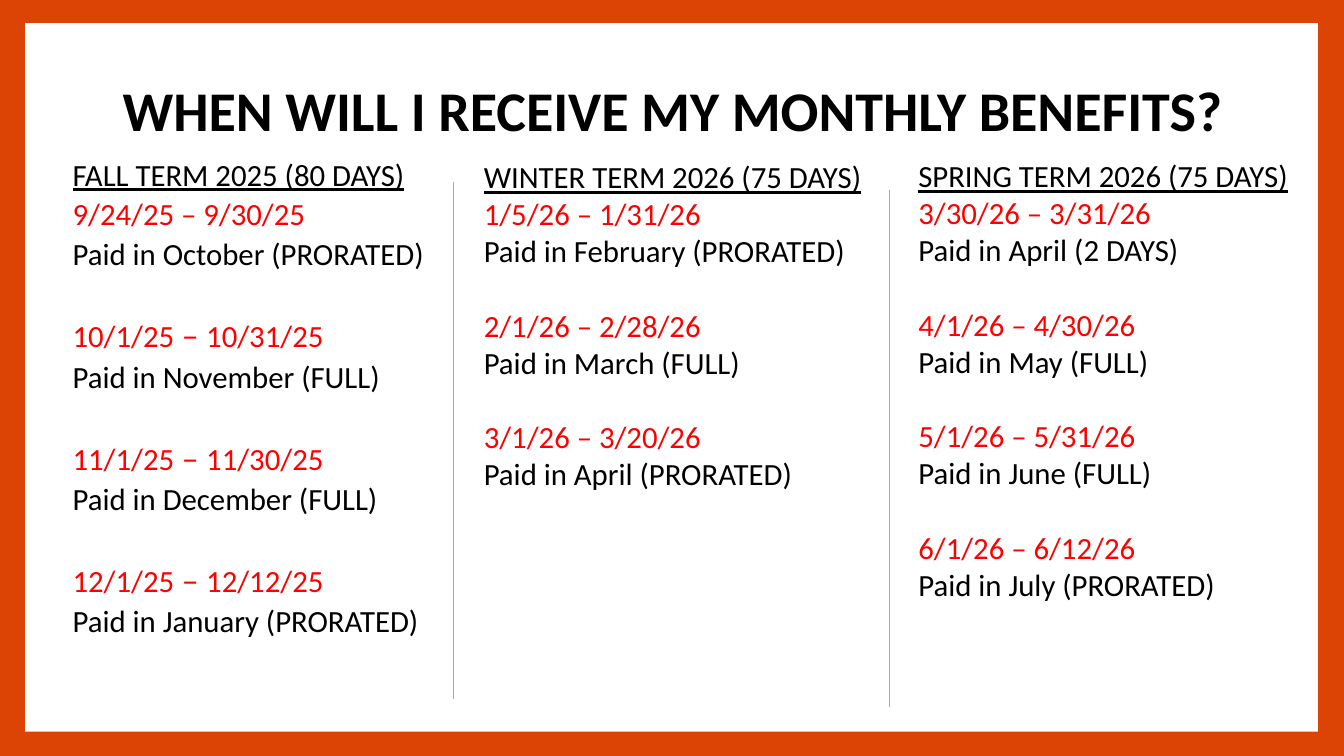
from dataclasses import dataclass

from pptx import Presentation
from pptx import util as u
from pptx.dml.color import RGBColor
from pptx.enum import shapes, text
from pptx.oxml.ns import qn
from lxml import etree

# Content
TITLE = "WHEN WILL I RECEIVE MY MONTHLY BENEFITS?"
FALL = ("FALL TERM 2025 (80 DAYS)", [
    ("9/24/25 – 9/30/25", "Paid in October (PRORATED)"),
    ("10/1/25 – 10/31/25", "Paid in November (FULL)"),
    ("11/1/25 – 11/30/25", "Paid in December (FULL)"),
    ("12/1/25 – 12/12/25", "Paid in January (PRORATED)"),
])
WINTER = ("WINTER TERM 2026 (75 DAYS)", [
    ("1/5/26 – 1/31/26", "Paid in February (PRORATED)"),
    ("2/1/26 – 2/28/26", "Paid in March (FULL)"),
    ("3/1/26 – 3/20/26", "Paid in April (PRORATED)"),
])
SPRING = ("SPRING TERM 2026 (75 DAYS)", [
    ("3/30/26 – 3/31/26", "Paid in April (2 DAYS)"),
    ("4/1/26 – 4/30/26", "Paid in May (FULL)"),
    ("5/1/26 – 5/31/26", "Paid in June (FULL)"),
    ("6/1/26 – 6/12/26", "Paid in July (PRORATED)"),
])

# Places in inches: left, top, width, height
PANEL = (0.25, 0.23, 12.82, 7.03)
TITLE_BOX = (0.92, 0.4, 11.5, 1.45)
FALL_BOX = (0.62, 1.59, 4.04, 5.04)
SIDE_COLUMNS = [(WINTER, (4.7, 1.52, 4.02, 3.8)),
                (SPRING, (9.01, 1.51, 3.88, 5.28))]
DIVIDERS = [(4.5, 1.81), (8.82, 1.89)]
DIVIDER_HEIGHT = 5.12


@dataclass(frozen=True)
class Theme:
    font: str = "Calibri"
    border: RGBColor = RGBColor(0xDC, 0x44, 0x05)
    panel: RGBColor = RGBColor(0xFF, 0xFF, 0xFF)
    ink: RGBColor = RGBColor(0, 0, 0)
    dates: RGBColor = RGBColor(0xFF, 0, 0)
    rule: RGBColor = RGBColor(0xA7, 0xAC, 0xA2)
    title: int = 40
    body: int = 22
    wide_dash: int = 24


T = Theme()


def place(sp, box):
    sp.left, sp.top, sp.width, sp.height = map(u.Inches, box)


def add_run(p, words, color, size=T.body, bold=False, underline=False):
    r = p.add_run()
    r.text = words
    r.font.name, r.font.size = T.font, u.Pt(size)
    r.font.bold, r.font.underline = bold, underline
    r.font.color.rgb = color


def fill_term(tf, term, spacing, before, gap, dash=T.body):
    """Write a term; gap is the space above each later pay period."""
    heading, periods = term

    def add_line(space):
        p = tf.add_paragraph()
        p.line_spacing, p.space_before = spacing, u.Pt(space)
        pPr = p._p.get_or_add_pPr()
        pPr.set("marL", "0")
        pPr.set("indent", "0")
        etree.SubElement(pPr, qn("a:buNone"))
        return p

    tf.word_wrap = True
    p = add_line(0)
    tf._txBody.remove(tf.paragraphs[0]._p)
    add_run(p, heading, T.ink, underline=True)
    for i, (dates, payment) in enumerate(periods):
        p = add_line(gap if i else before)
        start, end = dates.split(" – ")
        add_run(p, start, T.dates)
        add_run(p, " – ", T.dates, dash if i else T.body)
        add_run(p, end, T.dates)
        add_run(add_line(before), payment, T.ink)


def main():
    prs = Presentation()
    prs.slide_width, prs.slide_height = u.Inches(13.33), u.Inches(7.5)
    s = prs.slides.add_slide(prs.slide_layouts[1])

    # Orange border around a white panel
    s.background.fill.solid()
    s.background.fill.fore_color.rgb = T.border
    panel = s.shapes.add_shape(shapes.MSO_SHAPE.RECTANGLE,
                               *map(u.Inches, PANEL))
    panel.shadow.inherit = False
    panel.fill.solid()
    panel.fill.fore_color.rgb = T.panel
    panel.line.fill.background()
    s.shapes.element.insert(2, panel.element)  # send to back

    # Title
    title = s.shapes.title
    place(title, TITLE_BOX)
    tf = title.text_frame
    tf.auto_size = text.MSO_AUTO_SIZE.NONE
    tf.vertical_anchor = text.MSO_ANCHOR.MIDDLE
    p = tf.paragraphs[0]
    p.alignment, p.line_spacing = text.PP_ALIGN.CENTER, 0.9
    add_run(p, TITLE, T.ink, T.title, bold=True)

    # Fall term in the body placeholder
    body = s.placeholders[1]
    place(body, FALL_BOX)
    body.text_frame.auto_size = text.MSO_AUTO_SIZE.NONE
    fill_term(body.text_frame, FALL, 0.7, 10, 38.8, T.wide_dash)

    # Winter and spring terms
    for term, box in SIDE_COLUMNS:
        sp = s.shapes.add_textbox(*map(u.Inches, box))
        fill_term(sp.text_frame, term, 1.0, 0, 26.8)

    # Column dividers
    for x, y in DIVIDERS:
        line = s.shapes.add_connector(
            shapes.MSO_CONNECTOR.STRAIGHT,
            *map(u.Inches, (x, y, x, y + DIVIDER_HEIGHT)))
        line.line.color.rgb, line.line.width = T.rule, u.Pt(0.5)
        etree.SubElement(line.element.spPr, qn("a:effectLst"))

    prs.save("out.pptx")


if __name__ == "__main__":
    main()
